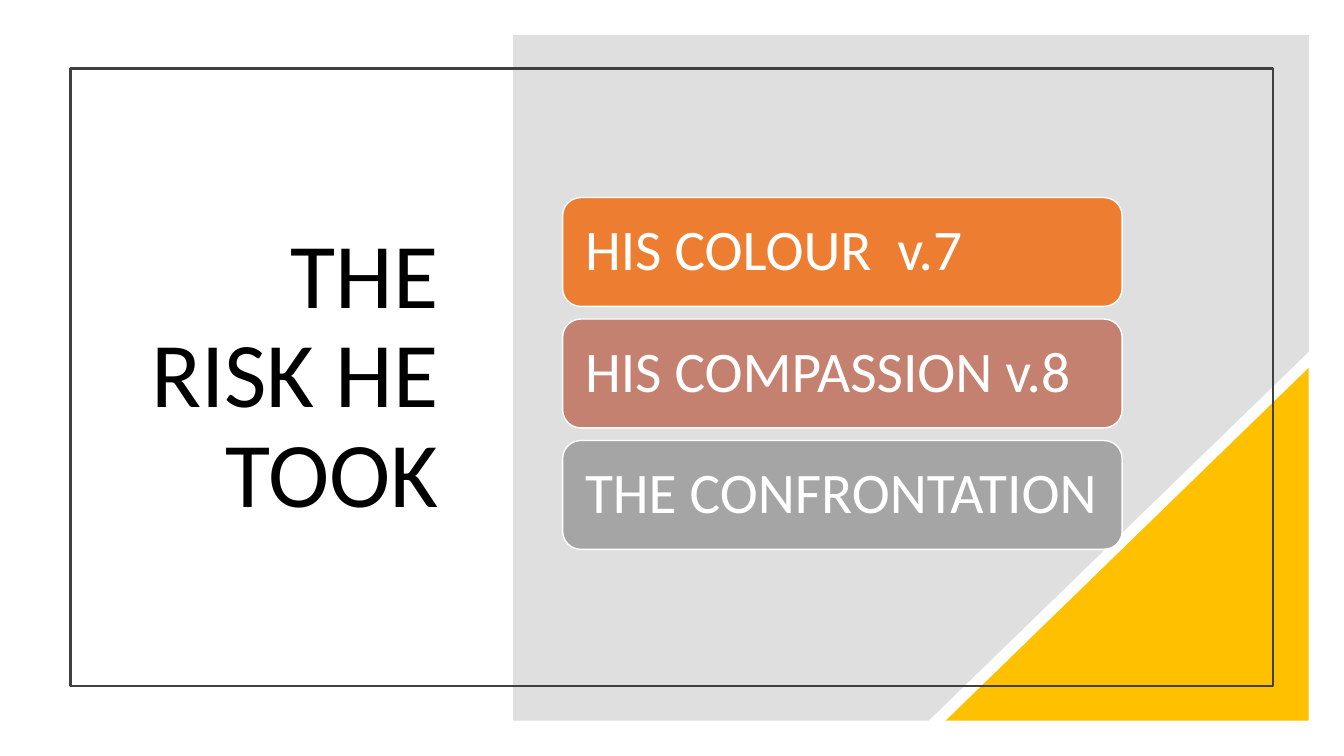
from lxml.etree import SubElement
from pptx import Presentation
from pptx.dml.color import RGBColor
from pptx.enum.shapes import MSO_SHAPE
from pptx.enum.text import MSO_ANCHOR, MSO_AUTO_SIZE, PP_ALIGN
from pptx.oxml.ns import qn
from pptx.util import Inches, Pt


def paint(target, color):
    if hasattr(target, "solid"):
        target.solid()
        target.fore_color.rgb = RGBColor.from_string(color)
    else:
        target.rgb = RGBColor.from_string(color)


def write(shape, text, size, color, align):
    frame = shape.text_frame
    frame.word_wrap = True
    frame.auto_size = MSO_AUTO_SIZE.NONE
    frame.vertical_anchor = MSO_ANCHOR.MIDDLE
    para = frame.paragraphs[0]
    para.alignment = align
    para.line_spacing = 0.9
    run = para.add_run()
    run.text = text
    run.font.size = Pt(size)
    run.font.name = "Calibri"
    paint(run.font.color, color)


deck = Presentation()
deck.slide_width = Inches(13.33)
deck.slide_height = Inches(7.5)
slide = deck.slides.add_slide(deck.slide_layouts[5])
shapes = slide.shapes

title = shapes.title
title.left, title.top = Inches(1.1), Inches(1.3)
title.width, title.height = Inches(3.35), Inches(4.9)
write(title, "THE RISK HE TOOK", 66, "000000", PP_ALIGN.RIGHT)

edge = [(5.09, 0.35), (12.98, 0.35), (12.98, 3.49), (9.21, 7.15), (5.09, 7.15)]
points = [(Inches(x), Inches(y)) for x, y in edge]
pen = shapes.build_freeform(*points[0])
pen.add_line_segments(points[1:], close=True)
panel = pen.convert_to_shape()
panel.shadow.inherit = False
paint(panel.fill, "808080")
panel.line.fill.background()
tint = panel.fill._xPr.find(qn("a:solidFill"))[0]
SubElement(tint, qn("a:alpha")).set("val", "25000")

corner = shapes.add_shape(MSO_SHAPE.RIGHT_TRIANGLE, Inches(9.38), Inches(3.65), Inches(3.6), Inches(3.5))
corner.shadow.inherit = False
paint(corner.fill, "FFC000")
corner.line.fill.background()
corner._element.spPr.xfrm.set("flipH", "1")

border = shapes.add_shape(MSO_SHAPE.RECTANGLE, Inches(0.7), Inches(0.68), Inches(11.93), Inches(6.13))
border.shadow.inherit = False
border.fill.background()
paint(border.line.color, "404040")
border.line.width = Pt(1.5)

cards = [
    ("HIS COLOUR  v.7", "ED7D31"),
    ("HIS COMPASSION v.8", "C48170"),
    ("THE CONFRONTATION", "A5A5A5"),
]
for row, (text, color) in enumerate(cards):
    top = Inches(1.96 + 1.205 * row)
    card = shapes.add_shape(MSO_SHAPE.ROUNDED_RECTANGLE, Inches(5.58), top, Inches(5.55), Inches(1.08))
    card.shadow.inherit = False
    paint(card.fill, color)
    paint(card.line.color, "FFFFFF")
    card.line.width = Pt(1)
    card.text_frame.margin_left = Inches(0.17)
    card.text_frame.margin_right = Inches(0.1)
    write(card, text, 41, "FFFFFF", PP_ALIGN.LEFT)

deck.save("out.pptx")
